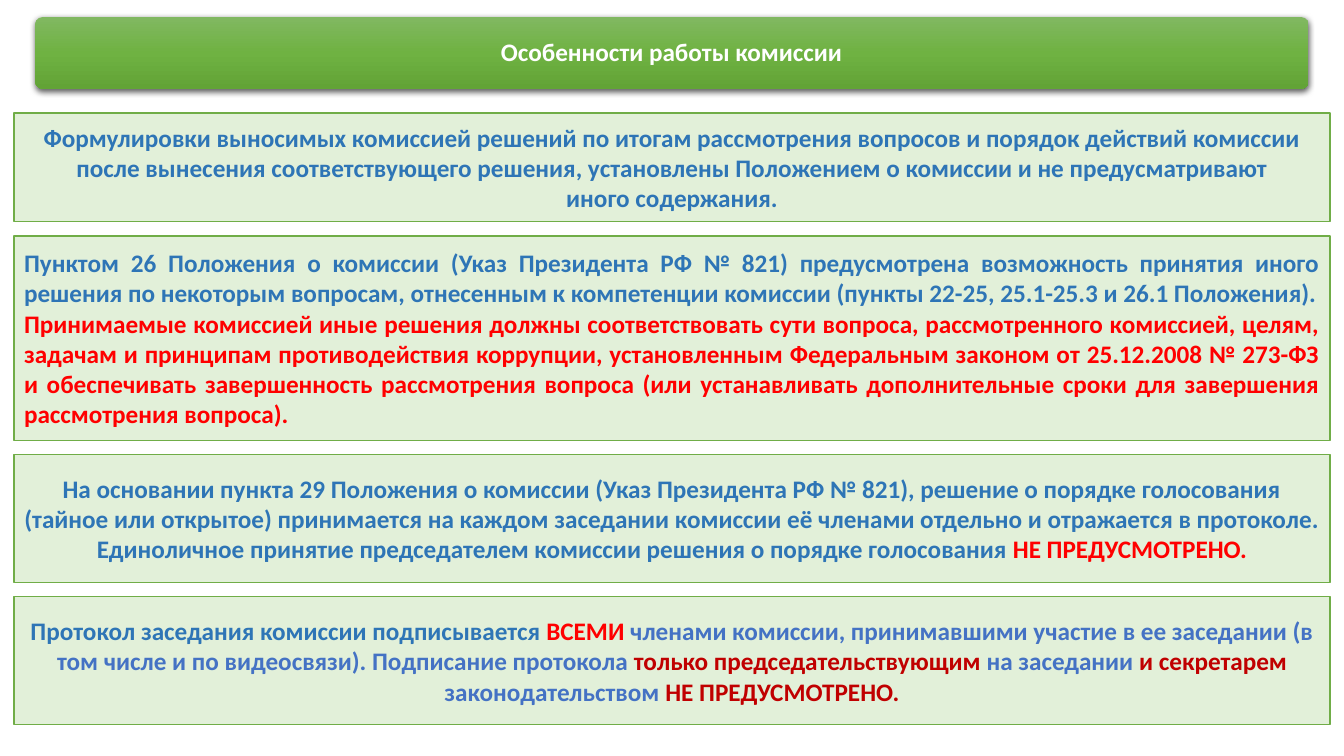
"""Build the slide on how the commission works: a banner and four statements."""
from copy import deepcopy
from dataclasses import dataclass

from pptx import Presentation
from pptx.dml.color import RGBColor
from pptx.enum.shapes import MSO_SHAPE
from pptx.enum.text import MSO_ANCHOR, MSO_AUTO_SIZE, PP_ALIGN
from pptx.oxml import parse_xml
from pptx.oxml.ns import nsdecls, qn
from pptx.slide import Slide
from pptx.text.text import TextFrame, _Run
from pptx.util import Emu, Pt

CENTER, JUSTIFY = PP_ALIGN.CENTER, PP_ALIGN.JUSTIFY
MIDDLE = MSO_ANCHOR.MIDDLE
RECTANGLE, ROUNDED = MSO_SHAPE.RECTANGLE, MSO_SHAPE.ROUNDED_RECTANGLE
NO_AUTOFIT = MSO_AUTO_SIZE.NONE

EMU_PER_PX = 9144
FONT, FONT_SIZE = "Calibri", Pt(18)
COLORS = {
    "white": "FFFFFF",
    "panel": "E2F0D9",
    "border": "70AD47",
    "blue": "2E75B6",
    "accent": "4472C4",
    "red": "FF0000",
    "dark_red": "C00000",
    "banner_top": "81B861",
    "banner_middle": "6FB242",
    "banner_bottom": "62A336",
}
BANNER_STOPS = ((0, "banner_top"), (0.5, "banner_middle"), (1, "banner_bottom"))
STATEMENT_LEFT, STATEMENT_TOP, STATEMENT_WIDTH, STATEMENT_GAP = 14, 112, 1305, 14


@dataclass(frozen=True)
class Phrase:
    """A piece of text in one colour."""

    text: str
    color: str = "blue"


@dataclass(frozen=True)
class Statement:
    """A bordered panel with its paragraphs of phrases."""

    height: int
    paragraphs: tuple[tuple[Phrase, ...], ...]
    alignment: PP_ALIGN = CENTER


STATEMENTS = (
    Statement(108, (
        (Phrase("Формулировки выносимых комиссией решений по итогам рассмотрения вопросов и порядок "
                "действий комиссии после вынесения соответствующего решения, установлены Положением "
                "о комиссии и не предусматривают"),),
        (Phrase("иного содержания."),),
    )),
    Statement(203, (
        (Phrase("Пунктом 26 Положения о комиссии (Указ Президента РФ № 821) предусмотрена возможность "
                "принятия иного решения по некоторым вопросам, отнесенным к компетенции комиссии "
                "(пункты 22-25, 25.1-25.3 и 26.1 Положения)."),),
        (Phrase("Принимаемые комиссией иные решения должны соответствовать сути вопроса, рассмотренного "
                "комиссией, целям, задачам и принципам противодействия коррупции, установленным "
                "Федеральным законом от 25.12.2008 № 273-ФЗ и обеспечивать завершенность рассмотрения "
                "вопроса (или устанавливать дополнительные сроки для завершения рассмотрения вопроса).",
                "red"),),
    ), JUSTIFY),
    Statement(127, (
        (Phrase("На основании пункта 29 Положения о комиссии (Указ Президента РФ № 821), решение о "
                "порядке голосования (тайное или открытое) принимается на каждом заседании комиссии "
                "её членами отдельно и отражается в протоколе."),),
        (Phrase("Единоличное принятие председателем комиссии решения о порядке голосования "),
         Phrase("НЕ ПРЕДУСМОТРЕНО.", "red")),
    )),
    Statement(127, (
        (Phrase("Протокол заседания комиссии подписывается "),
         Phrase("ВСЕМИ ", "red"),
         Phrase("членами комиссии, принимавшими участие в ее заседании (в том числе и по видеосвязи). "
                "Подписание протокола ", "accent"),
         Phrase("только председательствующим", "dark_red"),
         Phrase(" на заседании ", "accent"),
         Phrase("и секретарем ", "dark_red"),
         Phrase("законодательством ", "accent"),
         Phrase("НЕ ПРЕДУСМОТРЕНО.", "dark_red")),
    )),
)


def px(length: int) -> Emu:
    """Turn pixels into EMU."""
    return Emu(length * EMU_PER_PX)


def rgb(name: str) -> RGBColor:
    """Look up a named colour."""
    return RGBColor.from_string(COLORS[name])


def format_run(run: _Run, color: str) -> None:
    """Give a run the slide's bold type in the named colour."""
    run.font.name, run.font.size, run.font.bold = FONT, FONT_SIZE, True
    run.font.color.rgb = rgb(color)


def set_frame(frame: TextFrame, side: int, edge: int) -> None:
    """Wrap and centre a frame vertically, with the given insets."""
    frame.word_wrap = True
    frame.auto_size = NO_AUTOFIT
    frame.vertical_anchor = MIDDLE
    frame.margin_left = frame.margin_right = px(side)
    frame.margin_top = frame.margin_bottom = px(edge)


def add_banner(slide: Slide) -> None:
    """Draw the green gradient banner behind the title."""
    banner = slide.shapes.add_shape(ROUNDED, px(35), px(17), px(1263), px(71))
    banner.adjustments[0] = 0.1
    banner.line.fill.background()
    banner.shadow.inherit = False
    banner.fill.gradient()
    banner.fill.gradient_angle = 270
    properties = banner.element.spPr
    stop_list = properties.find(".//" + qn("a:gsLst"))
    stop_list.insert(1, deepcopy(stop_list[0]))
    for stop, (position, color) in zip(banner.fill.gradient_stops, BANNER_STOPS):
        stop.position = position
        stop.color.rgb = rgb(color)
    properties.find(qn("a:effectLst")).append(parse_xml(
        f'<a:outerShdw {nsdecls("a")} blurRad="57150" dist="19050" dir="5400000" algn="ctr" '
        'rotWithShape="0"><a:srgbClr val="000000"><a:alpha val="63000"/></a:srgbClr></a:outerShdw>'
    ))
    slide.shapes.title.element.addprevious(banner.element)


def set_title(slide: Slide, text: str) -> None:
    """Place the title over the banner."""
    title = slide.shapes.title
    title.left, title.top, title.width, title.height = px(38), px(20), px(1256), px(66)
    title.text_frame.text = text
    set_frame(title.text_frame, 7, 7)
    heading = title.text_frame.paragraphs[0]
    heading.alignment, heading.line_spacing = CENTER, 0.9
    format_run(heading.runs[0], "white")


def add_statement(slide: Slide, statement: Statement, top: int) -> None:
    """Draw one statement panel."""
    panel = slide.shapes.add_shape(
        RECTANGLE, px(STATEMENT_LEFT), px(top), px(STATEMENT_WIDTH), px(statement.height)
    )
    panel.shadow.inherit = False
    panel.fill.solid()
    panel.fill.fore_color.rgb = rgb("panel")
    panel.line.color.rgb = rgb("border")
    panel.line.width = Pt(1)
    frame = panel.text_frame
    set_frame(frame, 10, 5)
    for index, phrases in enumerate(statement.paragraphs):
        paragraph = frame.add_paragraph() if index else frame.paragraphs[0]
        paragraph.alignment = statement.alignment
        for phrase in phrases:
            run = paragraph.add_run()
            run.text = phrase.text
            format_run(run, phrase.color)


def main() -> None:
    """Build and save the slide."""
    presentation = Presentation()
    presentation.slide_width, presentation.slide_height = px(1333), px(750)
    slide = presentation.slides.add_slide(presentation.slide_layouts.get_by_name("Title Only"))
    add_banner(slide)
    set_title(slide, "Особенности работы комиссии")
    top = STATEMENT_TOP
    for statement in STATEMENTS:
        add_statement(slide, statement, top)
        top += statement.height + STATEMENT_GAP
    presentation.save("out.pptx")


if __name__ == "__main__":
    main()
